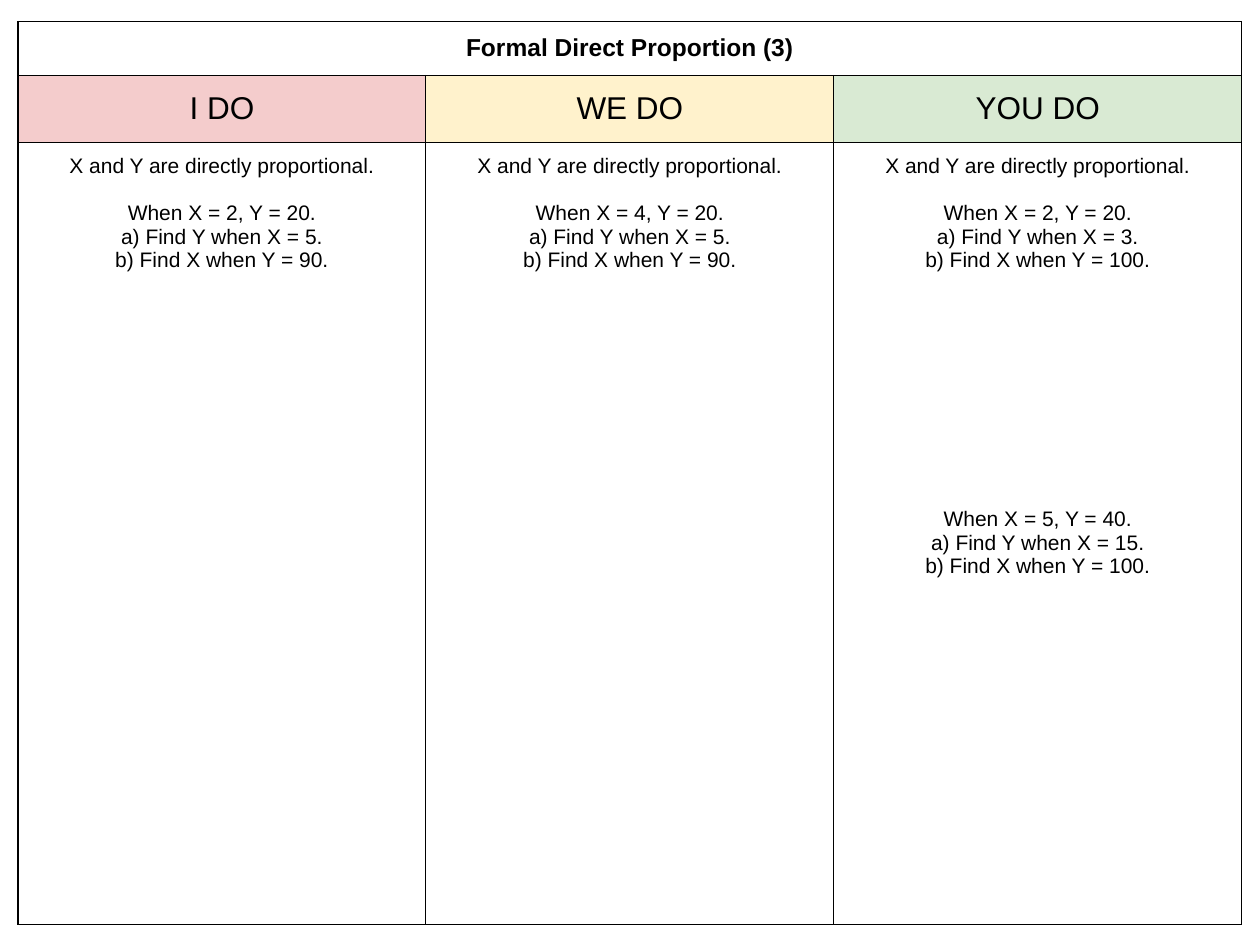
import pptx
import pptx.dml.color
import pptx.enum.text
import pptx.oxml
import pptx.oxml.ns
import pptx.util

Pt = pptx.util.Pt
LINE = 13.45  # height of one 12 pt line
STEM = "X and Y are directly proportional."
LANES = [
    ("I DO", "F4CCCC", [(2, 20, 5, 90)]),
    ("WE DO", "FFF2CC", [(4, 20, 5, 90)]),
    ("YOU DO", "D9EAD3", [(2, 20, 3, 100), (5, 40, 15, 100)]),
]


def color(code):
    return pptx.dml.color.RGBColor.from_string(code)


def write(frame, text, size=12, bold=False, before=0):
    """Fill the first paragraph if it is empty, else add one."""
    para = frame.paragraphs[0]
    if para.runs:
        para = frame.add_paragraph()
    para.alignment = pptx.enum.text.PP_ALIGN.CENTER
    para.space_before = Pt(before)
    run = para.add_run()
    run.text = text
    run.font.name = "Arial"
    run.font.size = Pt(size)
    run.font.bold = bold
    run.font.color.rgb = color("000000")


def edge(cell, width=0.75):
    """Draw a black border on all four sides."""
    props = cell._tc.get_or_add_tcPr()
    for spot, side in enumerate("LRTB"):
        props.insert(spot, pptx.oxml.parse_xml(
            f'<a:ln{side} {pptx.oxml.ns.nsdecls("a")} w="{Pt(width)}">'
            '<a:solidFill><a:srgbClr val="000000"/></a:solidFill>'
            f'</a:ln{side}>'))


def style(cell, fill=None):
    cell.margin_left = cell.margin_right = Pt(7.2)
    cell.margin_top = cell.margin_bottom = Pt(7.2)
    if fill:
        cell.fill.solid()
        cell.fill.fore_color.rgb = color(fill)
    else:
        cell.fill.background()
    edge(cell)


def tasks(frame, sums):
    write(frame, STEM)
    for gap, (x, y, find_y, find_x) in zip((LINE, 10 * LINE), sums):
        write(frame, f"When X = {x}, Y = {y}.", before=gap)
        write(frame, f"a) Find Y when X = {find_y}.")
        write(frame, f"b) Find X when Y = {find_x}.")


def grid(slide, left, top, width, heights):
    shape = slide.shapes.add_table(len(heights), len(LANES), Pt(left), Pt(top),
                                   Pt(width), Pt(sum(heights)))
    table = shape.table
    table.first_row = table.horz_banding = False
    for row, height in zip(table.rows, heights):
        row.height = Pt(height)
    for col, (name, fill, sums) in enumerate(LANES):
        table.columns[col].width = Pt(width / len(LANES))
        title, head, body = (table.cell(row, col) for row in range(3))
        style(title)
        style(head, fill)
        style(body)
        head.vertical_anchor = pptx.enum.text.MSO_ANCHOR.MIDDLE
        write(head.text_frame, name, size=18)
        tasks(body.text_frame, sums)
    table.cell(0, 0).merge(table.cell(0, len(LANES) - 1))
    write(table.cell(0, 0).text_frame, "Formal Direct Proportion (3)",
          size=14, bold=True)


def main():
    deck = pptx.Presentation()
    deck.slide_width, deck.slide_height = Pt(720), Pt(540)
    slide = deck.slides.add_slide(deck.slide_layouts[6])
    grid(slide, 10.3, 12.3, 699.3, (30.8, 38.2, 447.2))
    deck.save("out.pptx")


if __name__ == "__main__":
    main()
